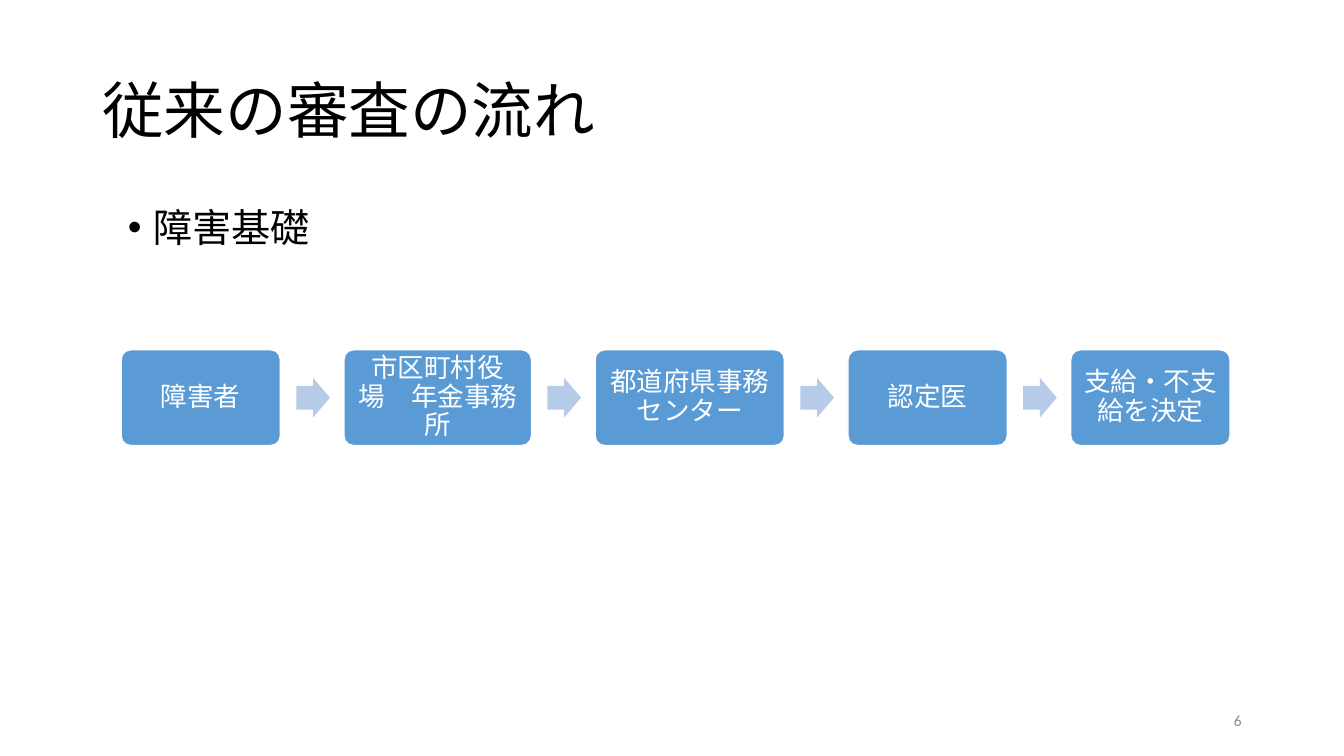
"""Build the slide on the conventional review process for disability pensions."""
from dataclasses import dataclass

from lxml import etree
from pptx import Presentation
from pptx import util as u
from pptx.dml import color
from pptx.enum import shapes, text
from pptx.oxml import ns


@dataclass(frozen=True)
class Theme:
    font: str = "Calibri"
    ink: str = "000000"
    paper: str = "FFFFFF"
    box: str = "5B9BD5"
    arrow: str = "B5CBE7"
    muted: str = "8C8C8C"
    title: float = 44
    body: float = 28
    step: float = 19
    number: float = 11


def write(sp, words, size, ink, frame, para):
    tf = sp.text_frame
    for name, value in {"word_wrap": True, **frame}.items():
        setattr(tf, name, value)
    p = tf.paragraphs[0]
    for name, value in para.items():
        setattr(p, name, value)
    r = p.add_run()
    r.text = words
    r.font.name, r.font.size = theme.font, u.Pt(size)
    r.font.color.rgb = color.RGBColor.from_string(ink)
    return p


def add_shape(kind, left, top, width, height, fill, adjustments):
    sp = s.shapes.add_shape(kind, u.Pt(left), u.Pt(top), u.Pt(width), u.Pt(height))
    sp.shadow.inherit = False
    sp.fill.solid()
    sp.fill.fore_color.rgb = color.RGBColor.from_string(fill)
    for i, value in enumerate(adjustments):
        sp.adjustments[i] = value
    return sp


theme = Theme()
prs = Presentation()
prs.slide_width, prs.slide_height = u.Pt(960), u.Pt(540)
s = prs.slides.add_slide(prs.slide_layouts[6])

middle = {"vertical_anchor": text.MSO_ANCHOR.MIDDLE}
tight = {"line_spacing": 0.9}

sp = s.shapes.add_textbox(u.Pt(66), u.Pt(28.75), u.Pt(828), u.Pt(104.4))
write(sp, "従来の審査の流れ", theme.title, theme.ink, middle, tight)

sp = s.shapes.add_textbox(u.Pt(84.25), u.Pt(145.5), u.Pt(792), u.Pt(316.8))
p = write(sp, "障害基礎", theme.body, theme.ink, {}, {**tight, "space_before": u.Pt(10)})
pPr = p._p.get_or_add_pPr()
pPr.set("marL", str(u.Pt(18)))
pPr.set("indent", str(-u.Pt(18)))
etree.SubElement(pPr, ns.qn("a:buFont")).set("typeface", "Arial")
etree.SubElement(pPr, ns.qn("a:buChar")).set("char", "•")

steps = [
    ("障害者", 113.75),
    ("市区町村役場　年金事務所", 134),
    ("都道府県事務センター", 135.25),
    ("認定医", 113.75),
    ("支給・不支給を決定", 113.75),
]
box_top, box_height, gap = 249.85, 68.4, 45.4
arrow_width, arrow_height, arrow_offset = 24, 28.2, 11.4
margins = ("margin_left", "margin_top", "margin_right", "margin_bottom")
box_frame = {**middle, **dict.fromkeys(margins, u.Pt(5.75))}
box_para = {**tight, "alignment": text.PP_ALIGN.CENTER}

left = 86.5
for i, (words, width) in enumerate(steps):
    if i:
        sp = add_shape(shapes.MSO_SHAPE.RIGHT_ARROW, left - gap + arrow_offset,
                       box_top + (box_height - arrow_height) / 2,
                       arrow_width, arrow_height, theme.arrow, (0.6, 0.5))
        sp.line.fill.background()
    sp = add_shape(shapes.MSO_SHAPE.ROUNDED_RECTANGLE, left, box_top,
                   width, box_height, theme.box, (0.1,))
    sp.line.color.rgb = color.RGBColor.from_string(theme.paper)
    sp.line.width = u.Pt(1)
    write(sp, words, theme.step, theme.paper, box_frame, box_para)
    left += width + gap

sp = s.shapes.add_textbox(u.Pt(678), u.Pt(500.5), u.Pt(216), u.Pt(28.75))
write(sp, "6", theme.number, theme.muted, middle, {"alignment": text.PP_ALIGN.RIGHT})

prs.save("out.pptx")
